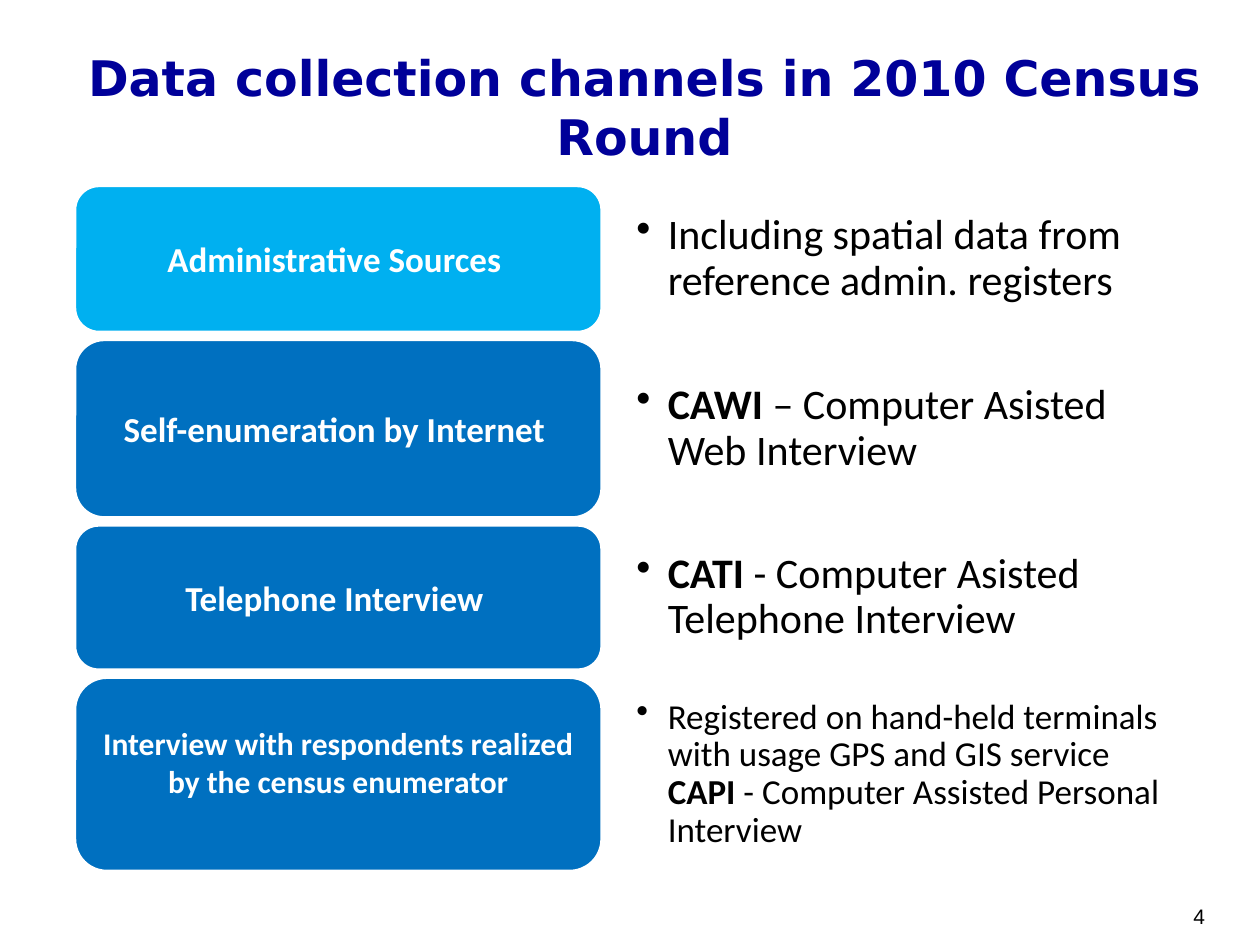
from dataclasses import dataclass

from lxml import etree
from pptx import Presentation
from pptx.dml.color import RGBColor
from pptx.enum import shapes, text
from pptx.oxml.ns import qn
from pptx.util import Pt

LIGHT_BLUE, BLUE, NAVY = "00B0F0", "0070C0", "000099"
WHITE, BLACK = "FFFFFF", "000000"
LINE_BREAK = "\v"

CHANNEL_LEFT, CHANNEL_WIDTH = 42.6, 301.5
NOTE_LEFT, NOTE_WIDTH, NOTE_HEIGHT = 344.2, 343.4, 59
FIRST_TOP, ROW_GAP = 106, 4


@dataclass(frozen=True)
class Span:
    text: str
    bold: bool = False


@dataclass(frozen=True)
class Channel:
    name: str
    height: float
    fill: str
    name_size: float
    note: tuple[Span, ...]
    note_size: float
    bottom_inset: float = 3


CHANNELS = (
    Channel("Administrative Sources ", 84, LIGHT_BLUE, 20,
            (Span("Including spatial data from reference admin. registers"),), 24),
    Channel("Self-enumeration by Internet ", 102, BLUE, 20,
            (Span("CAWI", True), Span(" – Computer Asisted Web Interview")), 24),
    Channel("Telephone Interview ", 83, BLUE, 20,
            (Span("CATI", True), Span(" - Computer Asisted Telephone Interview")), 24),
    Channel("Interview with respondents realized by the census enumerator", 111, BLUE, 18,
            (Span("Registered on hand-held terminals with usage GPS and GIS service"),
             Span(LINE_BREAK), Span("CAPI ", True),
             Span("- Computer Assisted Personal Interview")), 20, bottom_inset=17),
)


def color(value: str) -> RGBColor:
    return RGBColor.from_string(value)


def style_font(font, name: str, size: float, ink: str, bold: bool = False) -> None:
    font.name, font.size, font.bold = name, Pt(size), bold
    font.color.rgb = color(ink)


def set_frame(frame, horizontal: float, top: float, bottom: float,
              anchor=text.MSO_ANCHOR.MIDDLE) -> None:
    """Turn on wrapping and set the anchor and the insets."""
    frame.word_wrap = True
    frame.vertical_anchor = anchor
    frame.margin_left = frame.margin_right = Pt(horizontal)
    frame.margin_top, frame.margin_bottom = Pt(top), Pt(bottom)


def add_bullet(para) -> None:
    """Give the paragraph a hanging round bullet."""
    properties = para._p.get_or_add_pPr()
    properties.set("marL", str(Pt(18)))
    properties.set("indent", str(-Pt(18)))
    etree.SubElement(properties, qn("a:buChar")).set("char", "•")


def add_label(page, left: float, top: float, width: float, height: float, label: str,
              align, anchor, font_name: str, size: float, ink: str, bold: bool = False) -> None:
    box = page.shapes.add_textbox(Pt(left), Pt(top), Pt(width), Pt(height))
    set_frame(box.text_frame, 7.2, 3.6, 3.6, anchor)
    box.text_frame.text = label
    para = box.text_frame.paragraphs[0]
    para.alignment = align
    style_font(para.runs[0].font, font_name, size, ink, bold)


def add_channel_box(page, channel: Channel, top: float) -> None:
    box = page.shapes.add_shape(shapes.MSO_SHAPE.ROUNDED_RECTANGLE, Pt(CHANNEL_LEFT), Pt(top),
                                Pt(CHANNEL_WIDTH), Pt(channel.height))
    box.shadow.inherit = False
    box.fill.solid()
    box.fill.fore_color.rgb = color(channel.fill)
    box.line.color.rgb = color(WHITE)
    box.line.width = Pt(2)
    set_frame(box.text_frame, 5.5, 3, channel.bottom_inset)
    box.text_frame.text = channel.name
    para = box.text_frame.paragraphs[0]
    para.alignment = text.PP_ALIGN.CENTER
    style_font(para.runs[0].font, "Calibri", channel.name_size, WHITE, True)


def add_note(page, channel: Channel, top: float) -> None:
    """Place the bulleted note level with the middle of its channel box."""
    note_top = top + (channel.height - NOTE_HEIGHT) / 2
    box = page.shapes.add_textbox(Pt(NOTE_LEFT), Pt(note_top), Pt(NOTE_WIDTH), Pt(NOTE_HEIGHT))
    set_frame(box.text_frame, 19.4, 10, 10)
    para = box.text_frame.paragraphs[0]
    para.line_spacing = 0.9
    add_bullet(para)
    for span in channel.note:
        if span.text == LINE_BREAK:
            para.add_line_break()
            continue
        run = para.add_run()
        run.text = span.text
        style_font(run.font, "Calibri", channel.note_size, BLACK, span.bold)


def main() -> None:
    deck = Presentation()
    deck.slide_width, deck.slide_height = Pt(720), Pt(540)
    page = deck.slides.add_slide(deck.slide_layouts[6])

    top = FIRST_TOP
    for channel in CHANNELS:
        add_note(page, channel, top)
        add_channel_box(page, channel, top)
        top += channel.height + ROW_GAP

    add_label(page, 36.7, 31.7, 663, 58.3, "Data collection channels in 2010 Census Round",
              text.PP_ALIGN.CENTER, text.MSO_ANCHOR.MIDDLE, "DejaVu Sans", 28, NAVY, True)
    add_label(page, 527.8, 512.6, 167.8, 28.8, "4",
              text.PP_ALIGN.RIGHT, text.MSO_ANCHOR.TOP, "Arial", 12, BLACK)
    deck.save("out.pptx")


if __name__ == "__main__":
    main()
